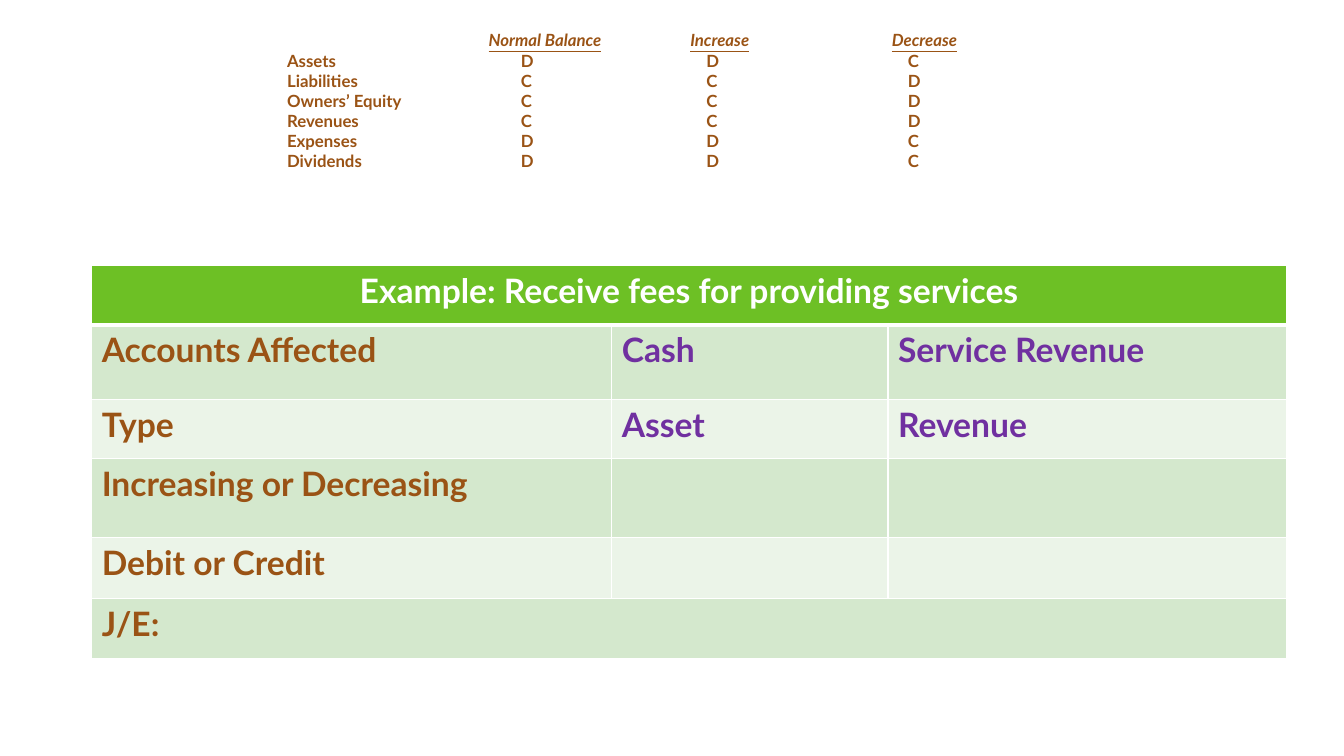
from lxml.etree import SubElement
from pptx import Presentation
from pptx.dml.color import RGBColor
from pptx.enum.text import MSO_AUTO_SIZE as AutoSize, PP_ALIGN as Align
from pptx.oxml import parse_xml
from pptx.oxml.ns import nsdecls, qn
from pptx.util import Pt

THEME = {
    "font": "Lato", "rules_size": 12, "table_size": 24,
    "brown": "9A5315", "purple": "7030A0", "white": "FFFFFF",
    "header": "6DC025", "bands": ("D4E8CD", "EBF4E8"),
}


def add_span(para, text, size, color, **formats):
    span = para.add_run()
    span.text = text
    span.font.color.rgb = RGBColor.from_string(THEME[color])
    values = {"name": THEME["font"], "size": Pt(THEME[size]), "bold": True}
    for name, value in (values | formats).items():
        setattr(span.font, name, value)


def add_borders(cell, top, bottom):
    widths = {"lnL": 1, "lnR": 1, "lnT": top, "lnB": bottom}
    properties = cell._tc.get_or_add_tcPr()
    for index, (side, width) in enumerate(widths.items()):
        properties.insert(index, parse_xml(
            f'<a:{side} {nsdecls("a")} w="{Pt(width)}"><a:solidFill>'
            f'<a:srgbClr val="{THEME["white"]}"/></a:solidFill></a:{side}>'))


deck = Presentation()
deck.slide_width, deck.slide_height = Pt(960), Pt(540)
page = deck.slides.add_slide(deck.slide_layouts[6])

example_rows = [
    ("Example: Receive fees for providing services", "", ""),
    ("Accounts Affected", "Cash", "Service Revenue"),
    ("Type", "Asset", "Revenue"),
    ("Increasing or Decreasing", "", ""),
    ("Debit or Credit", "", ""),
    ("J/E:", "", ""),
]
column_widths = [371.5, 197.3, 284.4]
row_heights = [42.5, 53.3, 42.5, 56.2, 43.9, 42.5]

table = page.shapes.add_table(
    len(row_heights), len(column_widths), Pt(65.5), Pt(189.4),
    Pt(sum(column_widths)), Pt(sum(row_heights))).table
for column, width in zip(table.columns, column_widths):
    column.width = Pt(width)
for row, height in zip(table.rows, row_heights):
    row.height = Pt(height)
for row in (0, len(row_heights) - 1):
    table.cell(row, 0).merge(table.cell(row, 2))

for row, texts in enumerate(example_rows):
    fill = THEME["bands"][(row - 1) % 2] if row else THEME["header"]
    for column, text in enumerate(texts):
        cell = table.cell(row, column)
        cell.fill.solid()
        cell.fill.fore_color.rgb = RGBColor.from_string(fill)
        add_borders(cell, 3 if row == 1 else 1, 3 if row == 0 else 1)
        if text:
            color = "white" if row == 0 else "purple" if column else "brown"
            para = cell.text_frame.paragraphs[0]
            para.alignment = Align.LEFT if row else Align.CENTER
            add_span(para, text, "table_size", color)

balance_rules = [
    ("", "Normal Balance", "Increase", "Decrease"),
    ("Assets", "D", "D", "C"),
    ("Liabilities", "C", "C", "D"),
    ("Owners’ Equity", "C", "C", "D"),
    ("Revenues", "C", "C", "D"),
    ("Expenses", "D", "D", "C"),
    ("Dividends", "D", "D", "C"),
]
heading_tabs = [144, 288, 432]
letter_tabs = [167, 299.5, 443.5]

box = page.shapes.add_textbox(Pt(198), Pt(18), Pt(544.3), Pt(108.7))
frame = box.text_frame
frame.word_wrap = True
frame.auto_size = AutoSize.SHAPE_TO_FIT_TEXT
for row, texts in enumerate(balance_rules):
    heading = row == 0
    para = frame.paragraphs[0] if heading else frame.add_paragraph()
    tabs = SubElement(para._p.get_or_add_pPr(), qn("a:tabLst"))
    for position in heading_tabs if heading else letter_tabs:
        SubElement(tabs, qn("a:tab"), pos=str(Pt(position)), algn="l")
    for column, text in enumerate(texts):
        if column:
            add_span(para, "\t", "rules_size", "brown")
        if text:
            add_span(para, text, "rules_size", "brown",
                     italic=heading, underline=heading)

deck.save("out.pptx")
